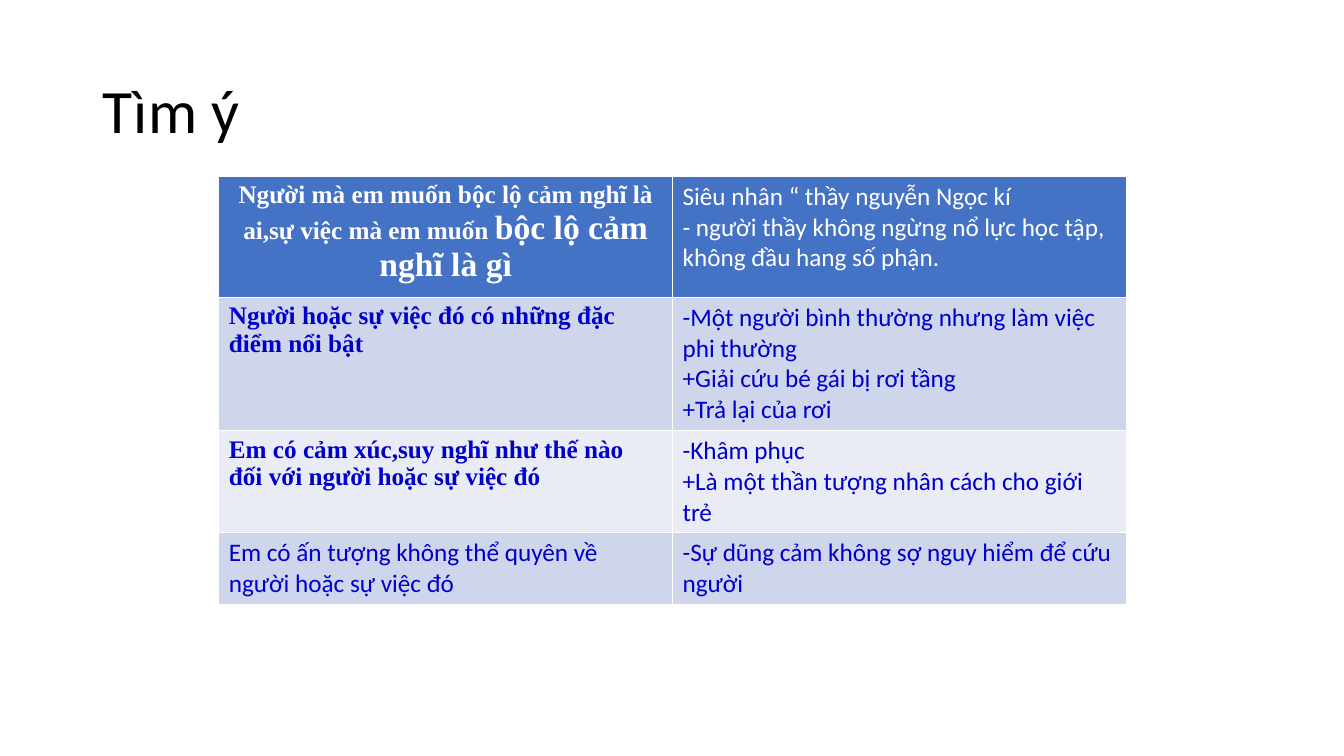
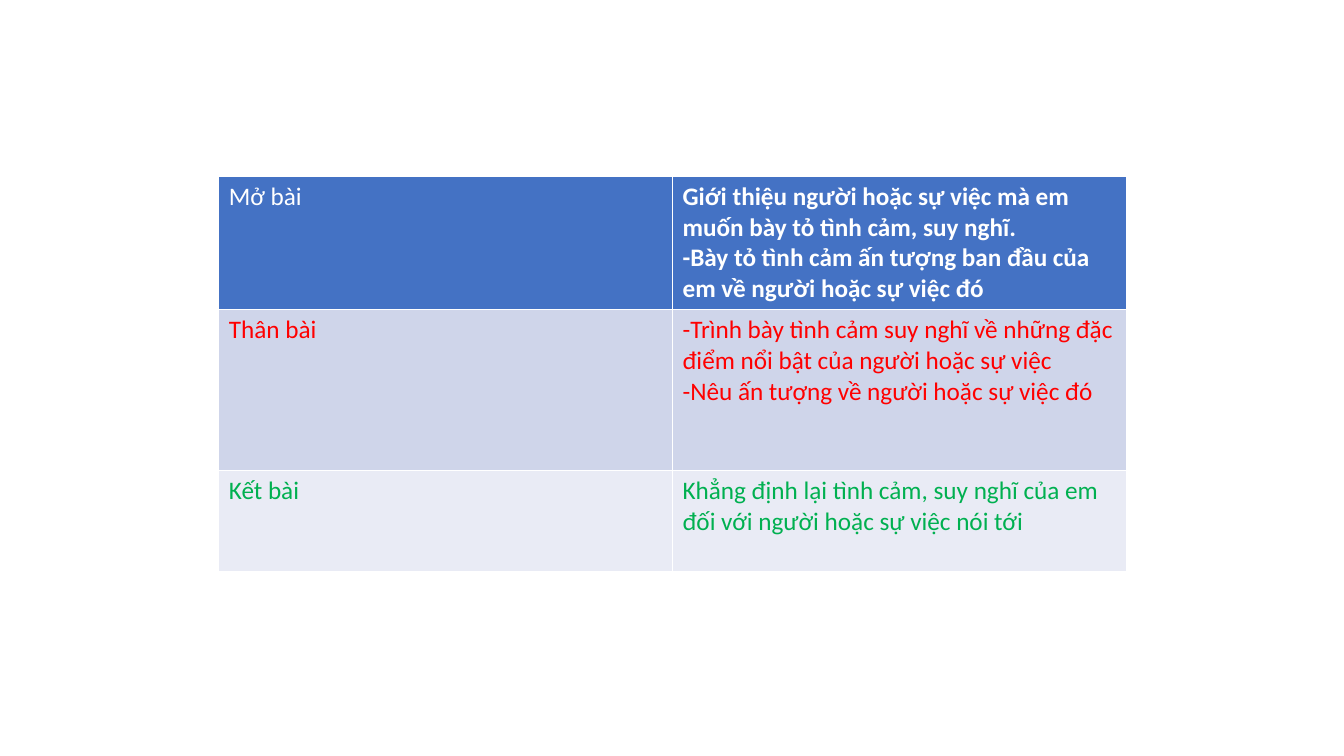
from dataclasses import dataclass

from pptx import Presentation
from pptx.dml.color import RGBColor
from pptx.enum.text import MSO_ANCHOR, PP_ALIGN
from pptx.oxml.ns import qn
from pptx.slide import Slide
from pptx.table import _Cell
from pptx.util import Inches, Pt
from lxml import etree

LEFT, CENTER = PP_ALIGN.LEFT, PP_ALIGN.CENTER
MIDDLE = MSO_ANCHOR.MIDDLE
TITLE_ONLY, BLANK = 5, 6
SANS, SERIF = "Calibri", "Times New Roman"

COLORS = {
    "black": "000000",
    "white": "FFFFFF",
    "header": "4472C4",
    "band_dark": "CFD5EA",
    "band_light": "E9EBF5",
    "blue": "0000CC",
    "red": "FF0000",
    "green": "00B050",
}
TABLE_LEFT, TABLE_TOP, COL_WIDTH = 2.17, 1.75, 4.5


@dataclass(frozen=True)
class Run:
    text: str
    size: int = 18
    font: str = SANS
    bold: bool = False


@dataclass(frozen=True)
class Cell:
    paragraphs: list[list[Run]]
    align: PP_ALIGN = LEFT


@dataclass(frozen=True)
class Row:
    height: float
    color: str
    cells: tuple[Cell, Cell]


def plain(*lines: str, **style) -> Cell:
    """Make a cell with one run in each paragraph."""
    return Cell([[Run(line, **style)] for line in lines])


def heading(text: str) -> Cell:
    return plain(text, font=SERIF, bold=True)


IDEA_ROWS = [
    Row(1.2, "white", (
        Cell([[
            Run("Người mà em muốn bộc lộ cảm nghĩ là ai,sự việc mà em muốn ",
                font=SERIF, bold=True),
            Run("bộc lộ cảm nghĩ là gì", 24, SERIF, True),
        ]], CENTER),
        plain("Siêu nhân “ thầy nguyễn Ngọc kí",
              "- người thầy không ngừng nổ lực học tập, không đầu hang số phận."),
    )),
    Row(1.32, "blue", (
        heading("Người hoặc sự việc đó có những đặc điểm nổi bật"),
        plain("-Một người bình thường nhưng làm việc phi thường",
              "+Giải cứu bé gái bị rơi tầng",
              "+Trả lại của rơi"),
    )),
    Row(1, "blue", (
        heading("Em có cảm xúc,suy nghĩ như thế nào đối với người hoặc sự việc đó"),
        plain("-Khâm phục",
              "+Là một thần tượng nhân cách cho giới trẻ"),
    )),
    Row(0.7, "blue", (
        plain("Em có ấn tượng không thể quyên về người hoặc sự việc đó"),
        plain("-Sự dũng cảm không sợ nguy hiểm để cứu người"),
    )),
]

OUTLINE_ROWS = [
    Row(1.32, "white", (
        plain("Mở bài"),
        plain("Giới thiệu người hoặc sự việc mà em muốn bày tỏ tình cảm, suy nghĩ.",
              "-Bày tỏ tình cảm ấn tượng ban đầu của em về người hoặc sự việc đó",
              bold=True),
    )),
    Row(1.6, "red", (
        plain("Thân bài"),
        plain("-Trình bày tình cảm suy nghĩ về những đặc điểm nổi bật của người hoặc sự việc",
              "-Nêu ấn tượng về người hoặc sự việc đó"),
    )),
    Row(1, "green", (
        plain("Kết bài"),
        plain("Khẳng định lại tình cảm, suy nghĩ của em đối với người hoặc sự việc nói tới"),
    )),
]


def rgb(name: str) -> RGBColor:
    return RGBColor.from_string(COLORS[name])


def write_run(p, run: Run, color: str) -> None:
    r = p.add_run()
    r.text = run.text
    formats = {"name": run.font, "size": Pt(run.size), "bold": run.bold}
    for attr, value in formats.items():
        setattr(r.font, attr, value)
    r.font.color.rgb = rgb(color)


def set_borders(cell: _Cell) -> None:
    tc_pr = cell._tc.get_or_add_tcPr()
    for side in ("lnL", "lnR", "lnT", "lnB"):
        ln = etree.SubElement(tc_pr, qn(f"a:{side}"), w=str(Pt(1)))
        fill = etree.SubElement(ln, qn("a:solidFill"))
        etree.SubElement(fill, qn("a:srgbClr"), val=COLORS["white"])


def write_cell(cell: _Cell, content: Cell, color: str, fill: str) -> None:
    set_borders(cell)
    cell.fill.solid()
    cell.fill.fore_color.rgb = rgb(fill)
    tf = cell.text_frame
    for i, runs in enumerate(content.paragraphs):
        p = tf.add_paragraph() if i else tf.paragraphs[0]
        p.alignment = content.align
        for run in runs:
            write_run(p, run, color)


def add_title(s: Slide, text: str) -> None:
    title = s.shapes.title
    box = {"left": 0.92, "top": 0.4, "width": 11.5, "height": 1.45}
    for attr, value in box.items():
        setattr(title, attr, Inches(value))
    tf = title.text_frame
    tf.vertical_anchor = MIDDLE
    p = tf.paragraphs[0]
    p.alignment, p.line_spacing = LEFT, 0.9
    write_run(p, Run(text, 44), "black")


def add_banded_table(s: Slide, rows: list[Row]) -> None:
    cols = len(rows[0].cells)
    height = sum(row.height for row in rows)
    table = s.shapes.add_table(
        len(rows), cols, Inches(TABLE_LEFT), Inches(TABLE_TOP),
        Inches(COL_WIDTH * cols), Inches(height)).table
    for i, row in enumerate(rows):
        table.rows[i].height = Inches(row.height)
        band = "band_dark" if i % 2 else "band_light"
        fill = band if i else "header"
        for j, content in enumerate(row.cells):
            write_cell(table.cell(i, j), content, row.color, fill)


def main() -> None:
    prs = Presentation()
    prs.slide_width, prs.slide_height = Inches(13.33), Inches(7.5)

    s = prs.slides.add_slide(prs.slide_layouts[TITLE_ONLY])
    add_title(s, "Tìm ý")
    add_banded_table(s, IDEA_ROWS)

    s = prs.slides.add_slide(prs.slide_layouts[BLANK])
    add_banded_table(s, OUTLINE_ROWS)

    prs.save("out.pptx")


if __name__ == "__main__":
    main()
